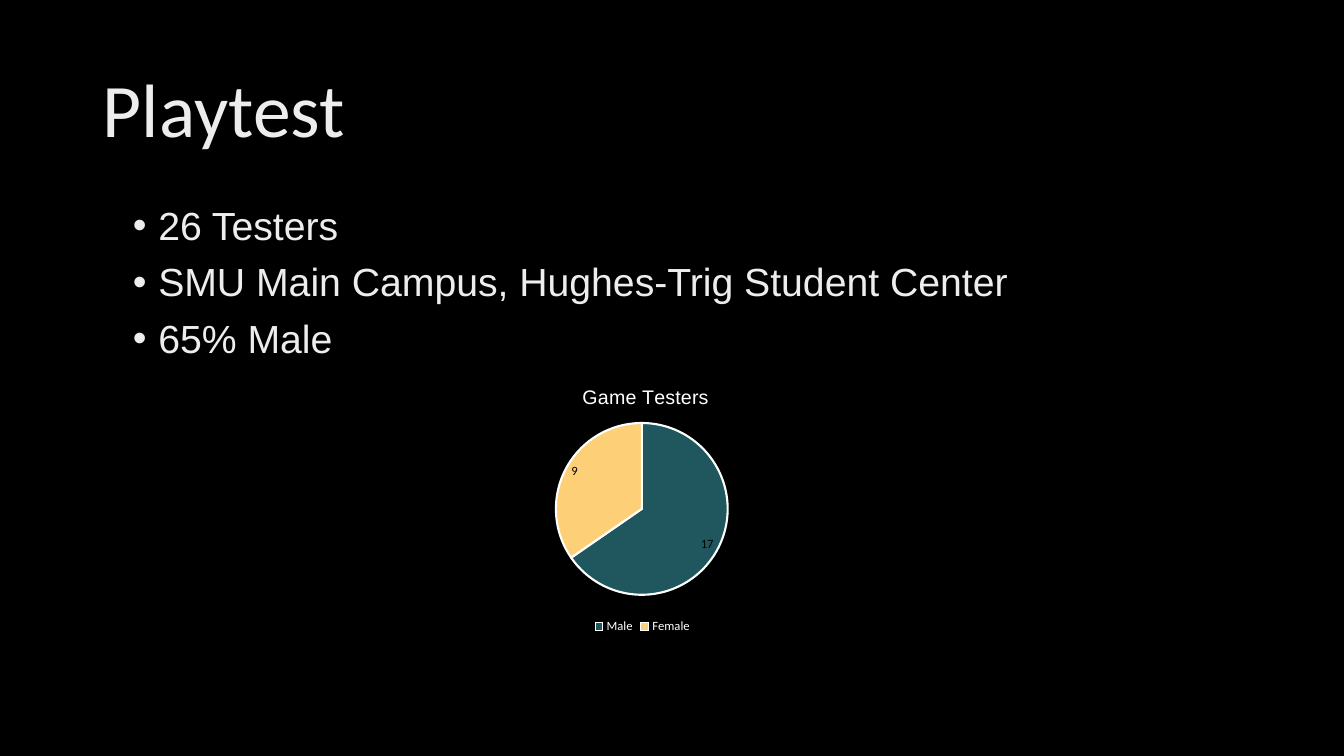
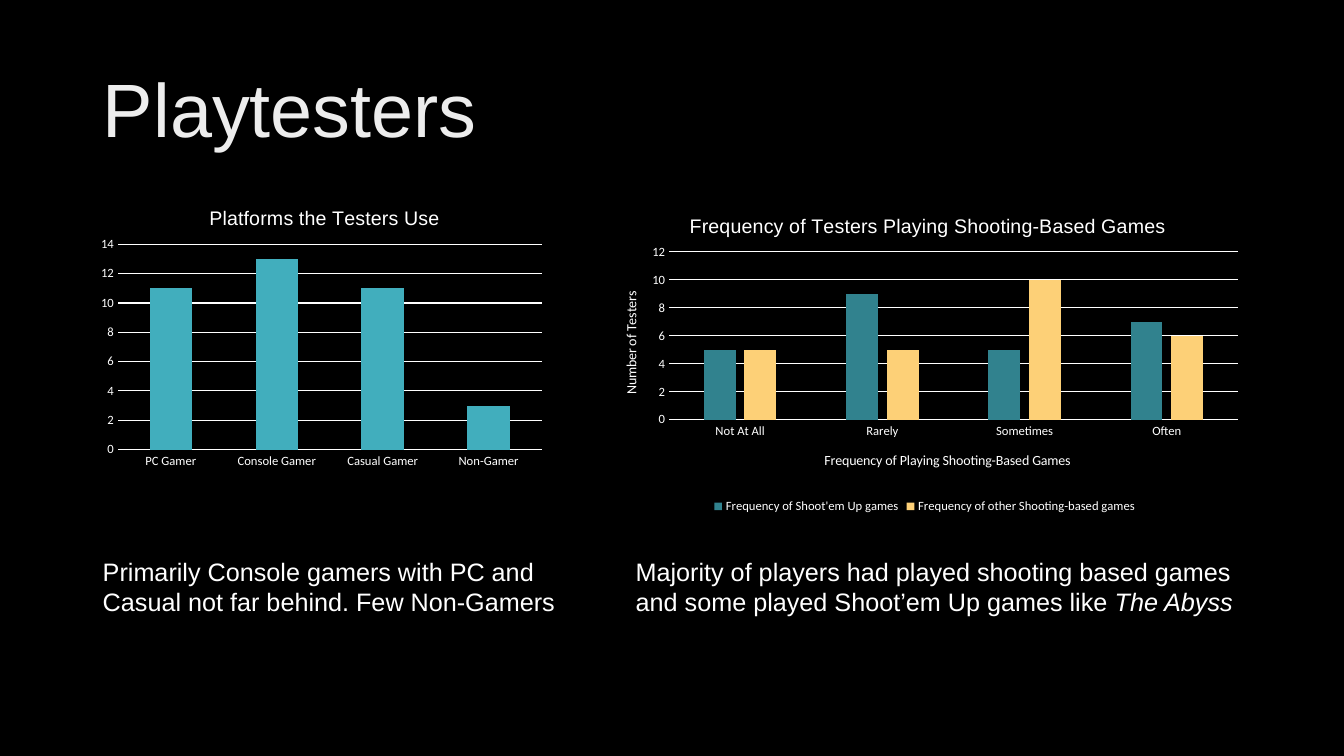
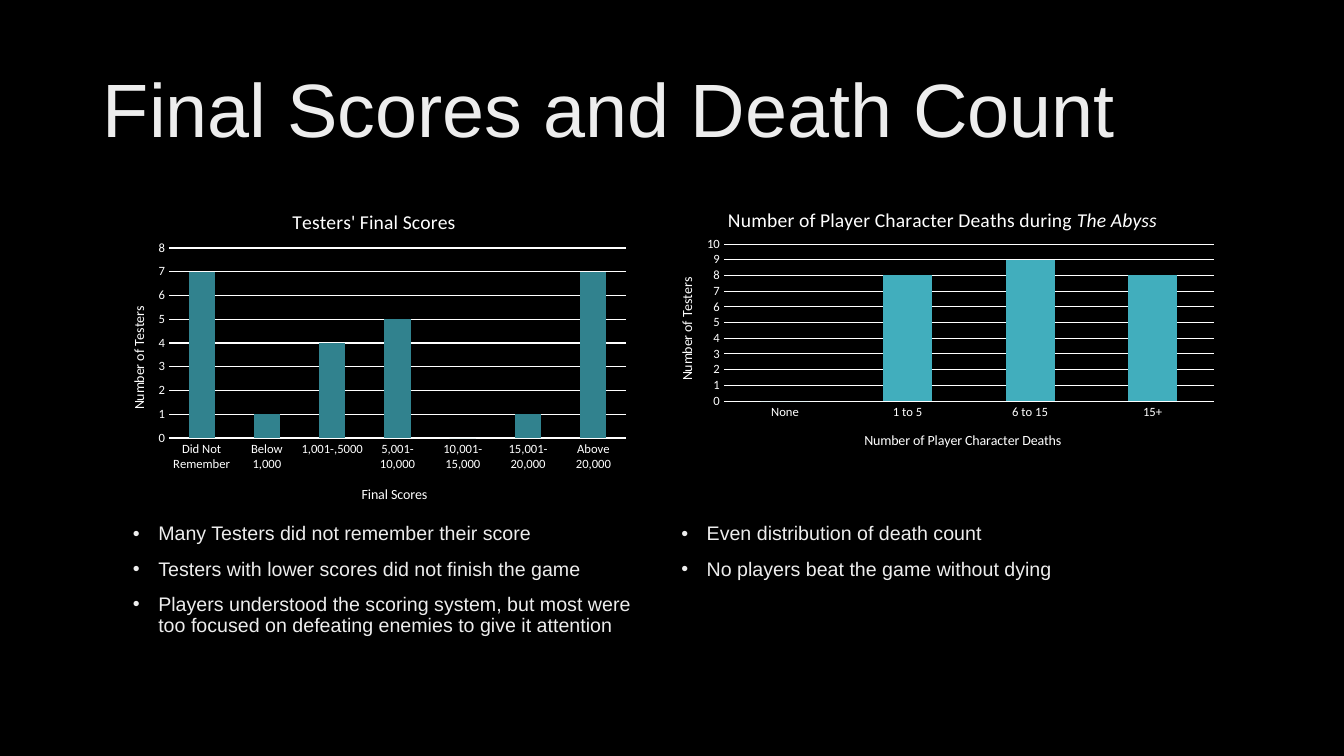
from dataclasses import dataclass
from typing import NamedTuple, Optional

from lxml import etree
from pptx import Presentation
from pptx import util as u
from pptx.chart.data import CategoryChartData
from pptx.dml.color import RGBColor
from pptx.enum import chart as ch, text
from pptx.oxml.ns import qn

# Shared look
BLACK, WHITE, SOFT = "000000", "FFFFFF", "EDEDED"
NAVY, TEAL, AQUA, SAND = "20575E", "31828E", "41AEBD", "FDD077"
SANS, THEME = "Arial", "Calibri"
GAME = "The Abyss"  # always set in italics
TITLE_ONLY = 5


class Box(NamedTuple):
    x: float
    y: float
    w: float
    h: float

    def cm(self) -> list:
        return [u.Cm(v) for v in self]


class Label(NamedTuple):
    text: str
    x: float
    y: float
    font: str = THEME


class Series(NamedTuple):
    name: str
    values: tuple
    color: str


@dataclass
class Columns:
    box: Box
    plot: Box
    title: Label
    cats: tuple
    series: tuple
    top: int
    unit: int
    cat_title: Optional[Label] = None
    val_title: Optional[Label] = None


@dataclass
class Caption:
    box: Box
    lines: tuple
    size: float
    color: str = SOFT
    bullets: bool = True


TITLE_BOX = Box(2.34, 1.02, 29.21, 3.68)


def rgb(value: str) -> RGBColor:
    return RGBColor.from_string(value)


def style(font, color: str, size: float, name: str, **more) -> None:
    values = {"size": u.Pt(size), "name": name, "bold": False, **more}
    for key, value in values.items():
        setattr(font, key, value)
    font.color.rgb = rgb(color)


def write(p, words: str, color: str, size: float, name: str) -> None:
    """Fill a paragraph, with the game's name in italics."""
    for part in words.partition(GAME):
        if part:
            r = p.add_run()
            r.text = part
            style(r.font, color, size, name, italic=part == GAME)


# Text
def add_slide(prs, title: str, font: str = SANS):
    s = prs.slides.add_slide(prs.slide_layouts[TITLE_ONLY])
    sp = s.shapes.title
    sp.left, sp.top, sp.width, sp.height = TITLE_BOX.cm()
    tf = sp.text_frame
    tf.auto_size = text.MSO_AUTO_SIZE.NONE
    tf.vertical_anchor = text.MSO_ANCHOR.MIDDLE
    p = tf.paragraphs[0]
    p.alignment, p.line_spacing = text.PP_ALIGN.LEFT, 0.9
    write(p, title, SOFT, 54, font)
    return s


def add_bullet(p) -> None:
    pPr = p._p.get_or_add_pPr()
    indent = u.Cm(0.64)
    pPr.set("marL", str(indent))
    pPr.set("indent", str(-indent))
    etree.SubElement(pPr, qn("a:buFont")).set("typeface", SANS)
    etree.SubElement(pPr, qn("a:buChar")).set("char", "•")


def add_caption(s, c: Caption) -> None:
    tf = s.shapes.add_textbox(*c.box.cm()).text_frame
    tf.word_wrap = True
    for i, line in enumerate(c.lines):
        p = tf.add_paragraph() if i else tf.paragraphs[0]
        if c.bullets:
            add_bullet(p)
            p.line_spacing = 0.9
        if i:
            p.space_before = u.Pt(10)
        write(p, line, c.color, c.size, SANS)


# Charts
def make_layout(values: dict, inner: bool = False):
    layout = etree.Element(qn("c:layout"))
    manual = etree.SubElement(layout, qn("c:manualLayout"))
    items = {"layoutTarget": "inner"} if inner else {}
    items |= {"xMode": "edge", "yMode": "edge", **values}
    for tag, value in items.items():
        etree.SubElement(manual, qn(f"c:{tag}")).set("val", str(value))
    return layout


def place(parent, index: int, layout) -> None:
    for old in parent.findall(qn("c:layout")):
        parent.remove(old)
    parent.insert(index, layout)


def fractions(box: Box, x: float, y: float) -> dict:
    return {"x": round((x - box.x) / box.w, 4), "y": round((y - box.y) / box.h, 4)}


def set_label(title, label: Label, box: Box, size: float, turned: bool = False) -> None:
    write(title.text_frame.paragraphs[0], label.text, WHITE, size, label.font)
    if turned:
        body = title.element.find(".//" + qn("a:bodyPr"))
        body.set("rot", "-5400000")
        body.set("vert", "horz")
    place(title.element, 1, make_layout(fractions(box, label.x, label.y)))


def add_chart(s, kind, box: Box, plot: Box, title: Label, cats: tuple, series: tuple,
              legend: bool):
    data = CategoryChartData()
    data.categories = cats
    for item in series:
        data.add_series(item.name, item.values)
    chart = s.shapes.add_chart(kind, *box.cm(), data).chart
    style(chart.font, WHITE, 10, THEME)
    chart.has_title = True
    set_label(chart.chart_title, title, box, 14)
    size = {"w": round(plot.w / box.w, 4), "h": round(plot.h / box.h, 4)}
    area = chart.element.find(".//" + qn("c:plotArea"))
    place(area, 0, make_layout(fractions(box, plot.x, plot.y) | size, inner=True))
    chart.has_legend = legend
    if legend:
        chart.legend.position = ch.XL_LEGEND_POSITION.BOTTOM
        chart.legend.include_in_layout = False
        style(chart.legend.font, WHITE, 9, THEME)
    return chart


def white_line(line, width: float) -> None:
    line.color.rgb = rgb(WHITE)
    line.width = u.Pt(width)


def add_columns(s, c: Columns) -> None:
    several = len(c.series) > 1
    kinds = ch.XL_CHART_TYPE
    kind = kinds.COLUMN_CLUSTERED if several else kinds.COLUMN_STACKED
    chart = add_chart(s, kind, c.box, c.plot, c.title, c.cats, c.series, several)
    plot = chart.plots[0]
    plot.vary_by_categories = False
    plot.gap_width, plot.overlap = (219, -27) if several else (150, 100)
    for drawn, item in zip(plot.series, c.series):
        drawn.format.fill.solid()
        drawn.format.fill.fore_color.rgb = rgb(item.color)
    cat, val = chart.category_axis, chart.value_axis
    for axis, label in ((cat, c.cat_title), (val, c.val_title)):
        axis.major_tick_mark = axis.minor_tick_mark = ch.XL_TICK_MARK.NONE
        style(axis.tick_labels.font, WHITE, 9, THEME)
        if label:
            set_label(axis.axis_title, label, c.box, 10, turned=axis is val)
    white_line(cat.format.line, 0.75)
    val.format.line.fill.background()
    val.has_major_gridlines = True
    white_line(val.major_gridlines.format.line, 0.75)
    val.minimum_scale, val.maximum_scale, val.major_unit = 0, c.top, c.unit


def add_pie(s) -> None:
    chart = add_chart(
        s, ch.XL_CHART_TYPE.PIE, Box(9.93, 9.19, 12.52, 6.88),
        Box(14.01, 10.66, 4.33, 4.33), Label("Game Testers", 14.59, 9.6, SANS),
        ("Male", "Female"), (Series("Series 1", (17, 9), NAVY),), True)
    plot = chart.plots[0]
    for i, color in enumerate((NAVY, SAND)):
        fmt = plot.series[0].points[i].format
        fmt.fill.solid()
        fmt.fill.fore_color.rgb = rgb(color)
        white_line(fmt.line, 1.5)
    plot.has_data_labels = True
    labels = plot.data_labels
    labels.show_value, labels.show_percentage = True, False
    labels.position = ch.XL_LABEL_POSITION.BEST_FIT
    style(labels.font, BLACK, 9, THEME)


# Slide content
PLATFORMS = Columns(
    Box(2.34, 4.7, 11.56, 7.26), Box(2.97, 6.16, 10.68, 5.17),
    Label("Platforms the Testers Use", 5.19, 5.09, SANS),
    ("PC Gamer", "Console Gamer", "Casual Gamer", "Non-Gamer"),
    (Series("Series 1", (11, 13, 11, 3), AQUA),), 14, 2)
FREQUENCY = Columns(
    Box(15.06, 4.9, 16.48, 8.15), Box(16.86, 6.35, 14.34, 4.23),
    Label("Frequency of Testers Playing Shooting-Based Games", 17.29, 5.29, SANS),
    ("Not At All", "Rarely", "Sometimes", "Often"),
    (Series("Frequency of Shoot'em Up games", (5, 9, 5, 7), TEAL),
     Series("Frequency of other Shooting-based games", (5, 5, 10, 6), SAND)), 12, 2,
    Label("Frequency of Playing Shooting-Based Games", 20.71, 11.31),
    Label("Number of Testers", 15.61, 7.28))
SCORES = Columns(
    Box(2.67, 4.7, 13.39, 8.38), Box(4.26, 6.25, 11.52, 4.79),
    Label("Testers' Final Scores", 7.28, 5.17),
    ("Did Not Remember", "Below 1,000", "1,001-,5000", "5,001-10,000",
     "10,001-15,000", "15,001-20,000", "Above 20,000"),
    (Series("Series 1", (7, 1, 4, 5, 0, 1, 7), TEAL),), 8, 1,
    Label("Final Scores", 9.05, 12.16), Label("Number of Testers", 3.21, 7.66))
DEATHS = Columns(
    Box(16.46, 4.7, 14.43, 7.04), Box(18.24, 6.15, 12.35, 3.96),
    Label(f"Number of Player Character Deaths during {GAME}", 18.27, 5.12),
    ("None", "1 to 5", "6 to 15", "15+"),
    (Series("Series 1", (0, 8, 9, 8), AQUA),), 10, 1,
    Label("Number of Player Character Deaths", 21.72, 10.8),
    Label("Number of Testers", 17.02, 6.93))

TESTERS = Caption(
    Box(3.1, 5.08, 28.42, 5.16),
    ("26 Testers", "SMU Main Campus, Hughes-Trig Student Center", "65% Male"), 28)
PLATFORM_NOTE = Caption(
    Box(2.34, 13.89, 13.44, 2.57),
    ("Primarily Console gamers with PC and Casual not far behind. Few Non-Gamers",),
    18, WHITE, False)
FREQUENCY_NOTE = Caption(
    Box(15.77, 13.89, 15.77, 2.57),
    ("Majority of players had played shooting based games and some played "
     f"Shoot’em Up games like {GAME}",), 18, WHITE, False)
SCORE_NOTES = Caption(
    Box(3.1, 13.08, 13.79, 4.06),
    ("Many Testers did not remember their score",
     "Testers with lower scores did not finish the game",
     "Players understood the scoring system, but most were too focused on "
     "defeating enemies to give it attention"), 14)
DEATH_NOTES = Caption(
    Box(16.92, 13.08, 13.79, 4.06),
    ("Even distribution of death count", "No players beat the game without dying"), 14)


def main() -> None:
    prs = Presentation()
    prs.slide_width, prs.slide_height = u.Cm(33.87), u.Cm(19.05)
    back = prs.slide_master.background.fill
    back.solid()
    back.fore_color.rgb = rgb(BLACK)

    # Who tested
    s = add_slide(prs, "Playtest", THEME)
    add_caption(s, TESTERS)
    add_pie(s)

    # Two column charts, each with its notes
    pages = (
        ("Playtesters", (FREQUENCY, PLATFORMS), (PLATFORM_NOTE, FREQUENCY_NOTE)),
        ("Final Scores and Death Count", (DEATHS, SCORES), (SCORE_NOTES, DEATH_NOTES)),
    )
    for title, charts, captions in pages:
        s = add_slide(prs, title)
        for columns in charts:
            add_columns(s, columns)
        for caption in captions:
            add_caption(s, caption)

    prs.save("out.pptx")


if __name__ == "__main__":
    main()
